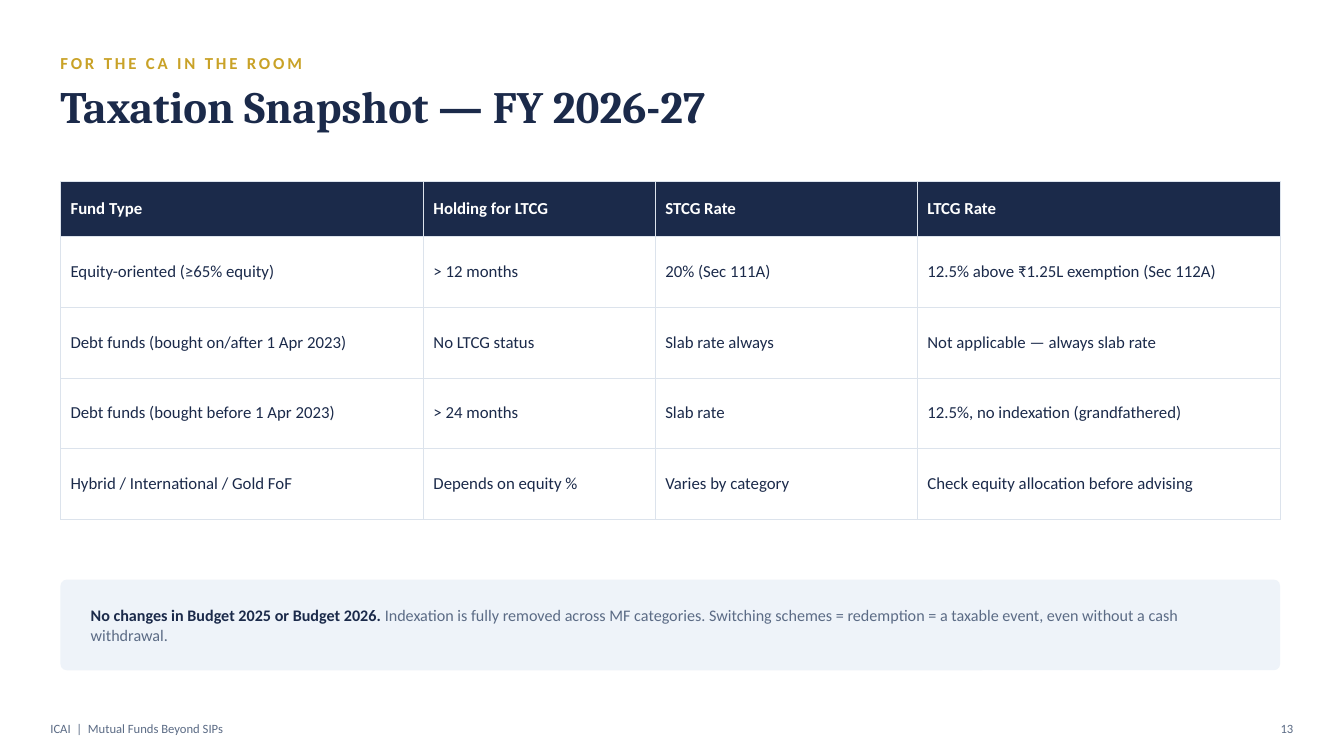
from lxml import etree
from pptx import Presentation
from pptx import util as u
from pptx.dml.color import RGBColor
from pptx.enum import shapes, text
from pptx.oxml import ns

NAVY, GOLD, SLATE = "1B2A4A", "C9A227", "5B6B85"
WHITE, MIST, RULE = "FFFFFF", "EEF3F9", "DCE3EC"
BODY, HEADING = "Calibri", "Cambria"


def rgb(value):
    return RGBColor.from_string(value)


class Deck:
    step = 0.1

    def __init__(self, width, height):
        self.presentation = Presentation()
        self.presentation.slide_width = self.grid(width)
        self.presentation.slide_height = self.grid(height)
        self.slide = self.presentation.slides.add_slide(self.presentation.slide_layouts[6])
        self.slide.background.fill.solid()
        self.slide.background.fill.fore_color.rgb = rgb(WHITE)

    def grid(self, count):
        return u.Inches(round(count * self.step, 3))

    def place(self, area):
        return [self.grid(count) for count in area]

    def add_wording(self, paragraph, wording, color, size, bold=False, face=BODY, tracking=0):
        run = paragraph.add_run()
        run.text = wording
        style = {"name": face, "size": u.Pt(size), "bold": bold}
        for key, value in style.items():
            setattr(run.font, key, value)
        run.font.color.rgb = rgb(color)
        if tracking:
            run.font._element.set("spc", str(tracking * 100))

    def label(self, area, *pieces, anchor=text.MSO_ANCHOR.MIDDLE, align=text.PP_ALIGN.LEFT):
        frame = self.slide.shapes.add_textbox(*self.place(area)).text_frame
        layout = {"word_wrap": True, "vertical_anchor": anchor, "margin_left": 0,
                  "margin_right": 0, "margin_top": 0, "margin_bottom": 0}
        for key, value in layout.items():
            setattr(frame, key, value)
        frame.paragraphs[0].alignment = align
        for piece in pieces:
            self.add_wording(frame.paragraphs[0], **piece)

    def panel(self, area, color, rounding):
        panel = self.slide.shapes.add_shape(shapes.MSO_SHAPE.ROUNDED_RECTANGLE, *self.place(area))
        panel.adjustments[0] = rounding
        panel.shadow.inherit = False
        panel.fill.solid()
        panel.fill.fore_color.rgb = rgb(color)
        panel.line.fill.background()

    def border(self, cell, color, width):
        properties = cell._tc.get_or_add_tcPr()
        for side in ("a:lnL", "a:lnR", "a:lnT", "a:lnB"):
            line = etree.SubElement(properties, ns.qn(side), w=str(u.Pt(width)))
            fill = etree.SubElement(line, ns.qn("a:solidFill"))
            etree.SubElement(fill, ns.qn("a:srgbClr"), val=color)

    def table(self, origin, columns, rows, entries):
        area = (*origin, sum(columns), sum(rows))
        table = self.slide.shapes.add_table(len(rows), len(columns), *self.place(area)).table
        table.horz_banding = False
        for column, width in zip(table.columns, columns):
            column.width = self.grid(width)
        for index, (row, height, wordings) in enumerate(zip(table.rows, rows, entries)):
            row.height = self.grid(height)
            heading = index == 0
            for cell, wording in zip(row.cells, wordings):
                self.border(cell, RULE, 0.75)
                cell.vertical_anchor = text.MSO_ANCHOR.MIDDLE
                if heading:
                    cell.fill.solid()
                    cell.fill.fore_color.rgb = rgb(NAVY)
                else:
                    cell.fill.background()
                self.add_wording(cell.text_frame.paragraphs[0], wording,
                                 WHITE if heading else NAVY, 12, heading)


TAX_RATES = [
    ("Fund Type", "Holding for LTCG", "STCG Rate", "LTCG Rate"),
    ("Equity-oriented (≥65% equity)", "> 12 months", "20% (Sec 111A)",
     "12.5% above ₹1.25L exemption (Sec 112A)"),
    ("Debt funds (bought on/after 1 Apr 2023)", "No LTCG status", "Slab rate always",
     "Not applicable — always slab rate"),
    ("Debt funds (bought before 1 Apr 2023)", "> 24 months", "Slab rate",
     "12.5%, no indexation (grandfathered)"),
    ("Hybrid / International / Gold FoF", "Depends on equity %", "Varies by category",
     "Check equity allocation before advising"),
]


def main():
    deck = Deck(133.33, 75)
    deck.label((6, 4.5, 80, 3.5),
               dict(wording="FOR THE CA IN THE ROOM", color=GOLD, size=12, bold=True, tracking=2))
    deck.label((6, 7.8, 121, 9),
               dict(wording="Taxation Snapshot — FY 2026-27", color=NAVY, size=32, bold=True,
                    face=HEADING),
               anchor=text.MSO_ANCHOR.TOP)
    deck.table((6, 18), (36, 23, 26, 36), [5.5] + [7] * 4, TAX_RATES)
    deck.panel((6, 57.5, 121, 9), MIST, 0.07)
    deck.label((9, 59, 115, 6),
               dict(wording="No changes in Budget 2025 or Budget 2026. ", color=NAVY, size=11.5,
                    bold=True),
               dict(wording="Indexation is fully removed across MF categories. Switching schemes "
                            "= redemption = a taxable event, even without a cash withdrawal.",
                    color=SLATE, size=11.5))
    deck.label((5, 70.8, 70, 3),
               dict(wording="ICAI  |  Mutual Funds Beyond SIPs", color=SLATE, size=9))
    deck.label((123.3, 70.8, 5, 3), dict(wording="13", color=SLATE, size=9),
               align=text.PP_ALIGN.RIGHT)
    deck.presentation.save("out.pptx")


if __name__ == "__main__":
    main()
